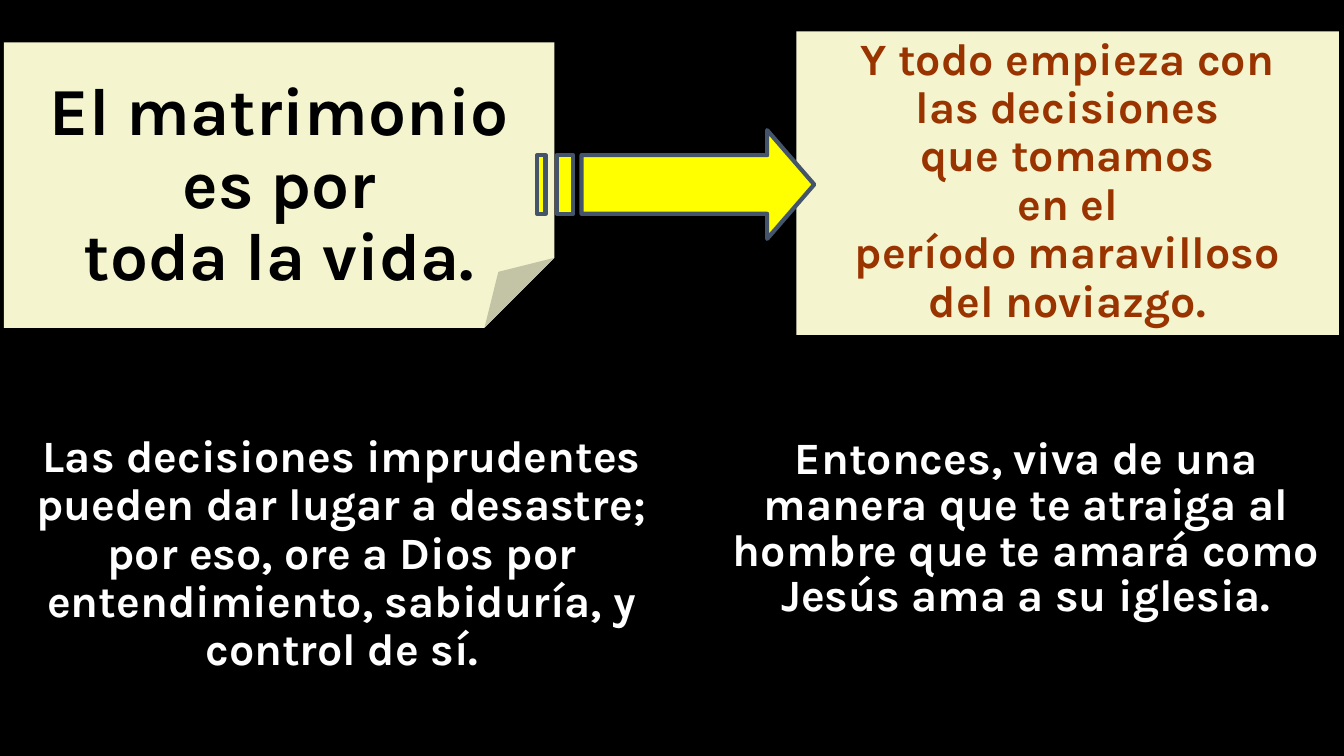
from lxml import etree
from pptx import Presentation
from pptx.dml.color import RGBColor
from pptx.enum.shapes import MSO_SHAPE
from pptx.enum.text import MSO_ANCHOR, MSO_AUTO_SIZE, PP_ALIGN
from pptx.oxml.ns import qn
from pptx.util import Cm, Pt

RECTANGLE, FOLDED_CORNER = MSO_SHAPE.RECTANGLE, MSO_SHAPE.FOLDED_CORNER
TOP, MIDDLE = MSO_ANCHOR.TOP, MSO_ANCHOR.MIDDLE
GROW = MSO_AUTO_SIZE.SHAPE_TO_FIT_TEXT
CENTER = PP_ALIGN.CENTER

FONT = "Karla"
COLORS = {
    "background": "000000",
    "paper": "F4F5CF",
    "promise": "000000",
    "beginning": "993300",
    "advice": "FFFFFF",
    "arrow": "FFFF00",
    "arrow_line": "44546A",
}

PROMISE = "El matrimonio\nes por\ntoda la vida."
BEGINNING = (
    "Y todo empieza con\nlas decisiones\nque tomamos\nen el\n"
    "período maravilloso\ndel noviazgo."
)
WARNING = (
    "Las decisiones imprudentes pueden dar lugar a desastre; por eso, "
    "ore a Dios por entendimiento, sabiduría, y control de sí."
)
INVITATION = (
    "Entonces, viva de una manera que te atraiga al hombre "
    "que te amará como Jesús ama a su iglesia."
)


def color(name):
    return RGBColor.from_string(COLORS[name])


def write_text(shape, text, size, color_name, spacing=0.9):
    """Fill a shape with centred bold paragraphs, one per line of text."""
    text_frame = shape.text_frame
    text_frame.text = text
    text_frame.word_wrap = True
    text_frame.vertical_anchor = TOP
    for paragraph in text_frame.paragraphs:
        paragraph.alignment = CENTER
        paragraph.line_spacing = spacing
        for run in paragraph.runs:
            run.font.name = FONT
            run.font.size = Pt(size)
            run.font.bold = True
            run.font.color.rgb = color(color_name)


def add_paper(slide, kind, left, top, width, height):
    shape = slide.shapes.add_shape(kind, Cm(left), Cm(top), Cm(width), Cm(height))
    shape.shadow.inherit = False
    shape.fill.solid()
    shape.fill.fore_color.rgb = color("paper")
    shape.line.fill.background()
    return shape


def set_fold(shape, share):
    """Set the size of the folded corner, which has no public adjustment."""
    geometry = shape.element.spPr.find(qn("a:prstGeom"))
    for guides in geometry.findall(qn("a:avLst")):
        geometry.remove(guides)
    guides = etree.SubElement(geometry, qn("a:avLst"))
    etree.SubElement(guides, qn("a:gd"), name="adj",
                     fmla=f"val {round(share * 100000)}")


def add_promise(slide, left, top, width, height):
    note = add_paper(slide, FOLDED_CORNER, left, top, width, height)
    set_fold(note, 0.245)
    write_text(note, PROMISE, 48, "promise")
    note.text_frame.word_wrap = False
    note.text_frame.vertical_anchor = MIDDLE
    note.text_frame.margin_top = Cm(1.95)


def add_beginning(slide, left, top, width, height):
    card = add_paper(slide, RECTANGLE, left, top, width, height)
    write_text(card, BEGINNING, 32, "beginning")
    card.text_frame.auto_size = GROW


def add_advice(slide, text, left, top, width, height, spacing):
    box = slide.shapes.add_textbox(Cm(left), Cm(top), Cm(width), Cm(height))
    write_text(box, text, 32, "advice", spacing)
    box.text_frame.auto_size = GROW


def add_striped_arrow(slide, left, top, width, height):
    """Draw an arrow to the right with two stripes behind its shaft."""
    shaft_top, shaft_bottom = 0.23 * height, 0.77 * height
    neck, tail = 0.83 * width, 0.16 * width
    outlines = [
        [(neck, 0), (neck, shaft_top), (tail, shaft_top), (tail, shaft_bottom),
         (neck, shaft_bottom), (neck, height), (width, height / 2)],
    ]
    for start, end in ((0.07, 0.13), (0, 0.03)):
        x1, x2 = start * width, end * width
        outlines.append([(x1, shaft_top), (x1, shaft_bottom),
                         (x2, shaft_bottom), (x2, shaft_top)])

    builder = slide.shapes.build_freeform(
        Cm(left + outlines[0][0][0]), Cm(top + outlines[0][0][1]))
    for index, outline in enumerate(outlines):
        points = [(Cm(left + x), Cm(top + y)) for x, y in outline]
        if index:
            builder.move_to(*points[0])
        builder.add_line_segments(points[1:], close=True)
    arrow = builder.convert_to_shape()
    arrow.shadow.inherit = False
    arrow.fill.solid()
    arrow.fill.fore_color.rgb = color("arrow")
    arrow.line.color.rgb = color("arrow_line")
    arrow.line.width = Pt(3)


def main():
    presentation = Presentation()
    presentation.slide_width = Cm(33.87)
    presentation.slide_height = Cm(19.05)
    slide = presentation.slides.add_slide(presentation.slide_layouts[6])
    slide.background.fill.solid()
    slide.background.fill.fore_color.rgb = color("background")

    add_advice(slide, WARNING, 0.1, 10.8, 17.04, 6.4, 0.9)
    add_beginning(slide, 20.07, 0.79, 13.67, 7.65)
    add_promise(slide, 0.1, 1.07, 13.87, 7.19)
    add_advice(slide, INVITATION, 17.98, 10.92, 15.77, 6.07, 0.85)
    add_striped_arrow(slide, 13.54, 3.28, 6.98, 2.74)

    presentation.save("out.pptx")


if __name__ == "__main__":
    main()
